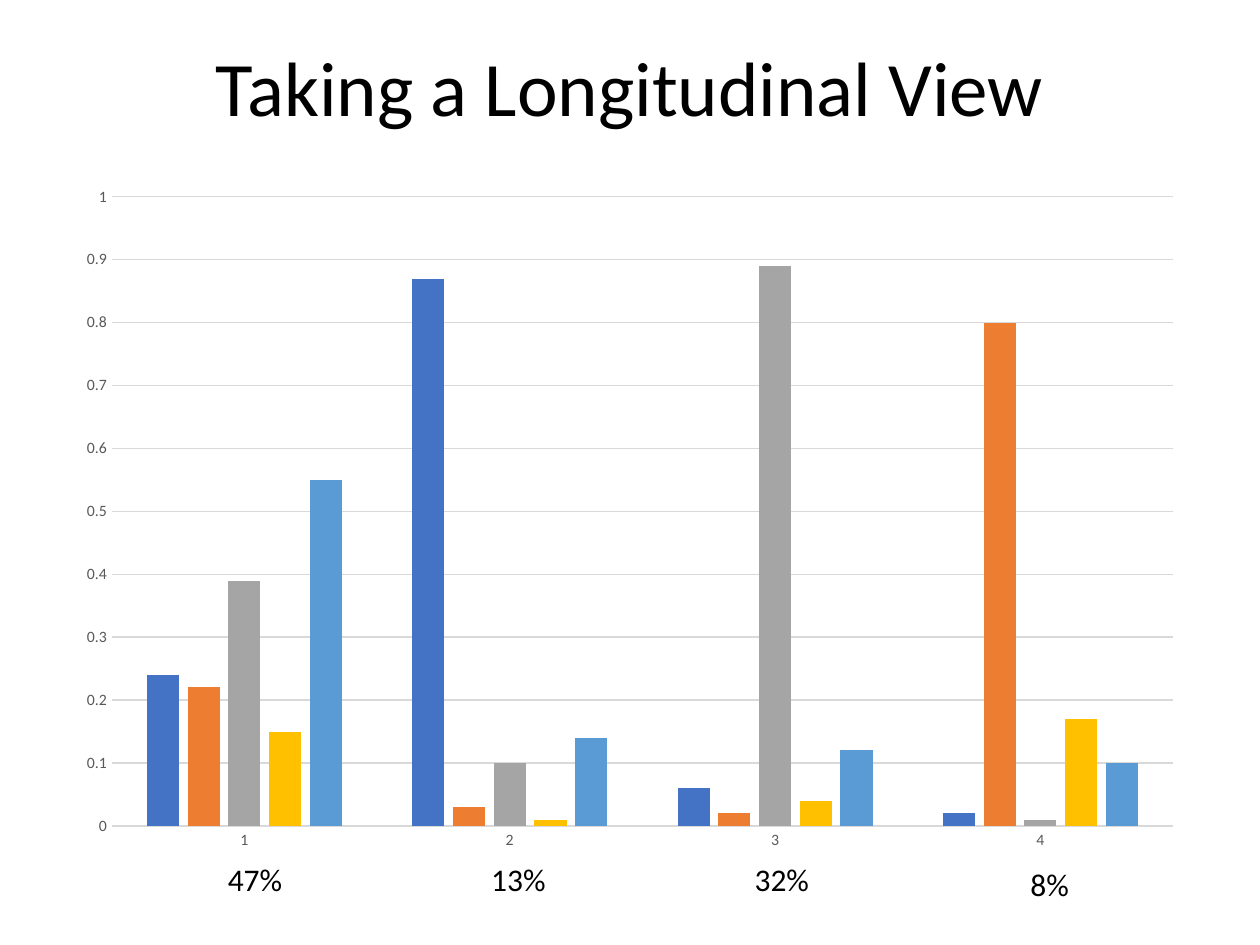
from dataclasses import dataclass

from pptx import Presentation
from pptx.chart.data import CategoryChartData
from pptx.dml.color import RGBColor
from pptx.enum.chart import XL_CHART_TYPE as ChartType, XL_TICK_MARK as TickMark
from pptx.enum.text import MSO_ANCHOR as Anchor, PP_ALIGN as Align
from pptx.util import Inches, Pt


@dataclass(frozen=True)
class Theme:
    font: str = "Calibri"
    text: str = "000000"
    axis_text: str = "595959"
    grid: str = "D9D9D9"
    series: tuple = ("4472C4", "ED7D31", "A5A5A5", "FFC000", "5B9BD5")
    title_size: int = 44
    label_size: int = 18
    axis_size: int = 9
    line_width: float = 0.75


THEME = Theme()

CATEGORIES = ("1", "2", "3", "4")
SERIES_VALUES = (
    (0.24, 0.87, 0.06, 0.02),
    (0.22, 0.03, 0.02, 0.8),
    (0.39, 0.1, 0.89, 0.01),
    (0.15, 0.01, 0.04, 0.17),
    (0.55, 0.14, 0.12, 0.1),
)
SHARES = (
    ("47%", (1.71, 6.78, 1.1, 0.4)),
    ("13%", (3.8, 6.78, 1.1, 0.4)),
    ("32%", (5.89, 6.78, 0.82, 0.4)),
    ("8%", (8.08, 6.82, 1.1, 0.4)),
)


def to_inches(box):
    return [Inches(length) for length in box]


def add_text(slide, text, box, size, align=Align.LEFT, anchor=Anchor.TOP, line_spacing=1.0):
    shape = slide.shapes.add_textbox(*to_inches(box))
    frame = shape.text_frame
    frame.word_wrap = True
    frame.vertical_anchor = anchor
    paragraph = frame.paragraphs[0]
    paragraph.alignment = align
    paragraph.line_spacing = line_spacing
    run = paragraph.add_run()
    run.text = text
    style_font(run.font, size, THEME.text)
    return shape


def style_font(font, size, color):
    font.name = THEME.font
    font.size = Pt(size)
    font.color.rgb = RGBColor.from_string(color)


def style_line(line):
    line.color.rgb = RGBColor.from_string(THEME.grid)
    line.width = Pt(THEME.line_width)


def style_axis(axis):
    axis.major_tick_mark = TickMark.NONE
    axis.minor_tick_mark = TickMark.NONE
    style_font(axis.tick_labels.font, THEME.axis_size, THEME.axis_text)


def add_profile_chart(slide, box):
    data = CategoryChartData()
    data.categories = CATEGORIES
    for number, values in enumerate(SERIES_VALUES, 1):
        data.add_series(f"Series {number}", values)
    chart = slide.shapes.add_chart(ChartType.COLUMN_CLUSTERED, *to_inches(box), data).chart
    chart.has_legend = False
    chart.has_title = False
    style_font(chart.font, 10, THEME.text)

    style_axis(chart.category_axis)
    style_line(chart.category_axis.format.line)

    value_axis = chart.value_axis
    style_axis(value_axis)
    value_axis.minimum_scale = 0
    value_axis.maximum_scale = 1
    value_axis.major_unit = 0.1
    value_axis.format.line.fill.background()
    style_line(value_axis.major_gridlines.format.line)

    plot = chart.plots[0]
    plot.vary_by_categories = False
    plot.gap_width = 219
    plot.overlap = -27
    for series, color in zip(plot.series, THEME.series):
        series.format.fill.solid()
        series.format.fill.fore_color.rgb = RGBColor.from_string(color)


def add_title(slide, box):
    add_text(slide, "Taking a Longitudinal View", box, THEME.title_size,
             align=Align.CENTER, anchor=Anchor.MIDDLE, line_spacing=0.9)


def add_shares(slide):
    for text, box in SHARES:
        add_text(slide, text, box, THEME.label_size)


def main():
    presentation = Presentation()
    presentation.slide_width = Inches(10)
    presentation.slide_height = Inches(7.5)
    slide = presentation.slides.add_slide(presentation.slide_layouts[6])
    add_title(slide, (0.69, 0, 8.62, 1.45))
    add_profile_chart(slide, (0.51, 1.38, 8.98, 5.47))
    add_shares(slide)
    presentation.save("out.pptx")


if __name__ == "__main__":
    main()
